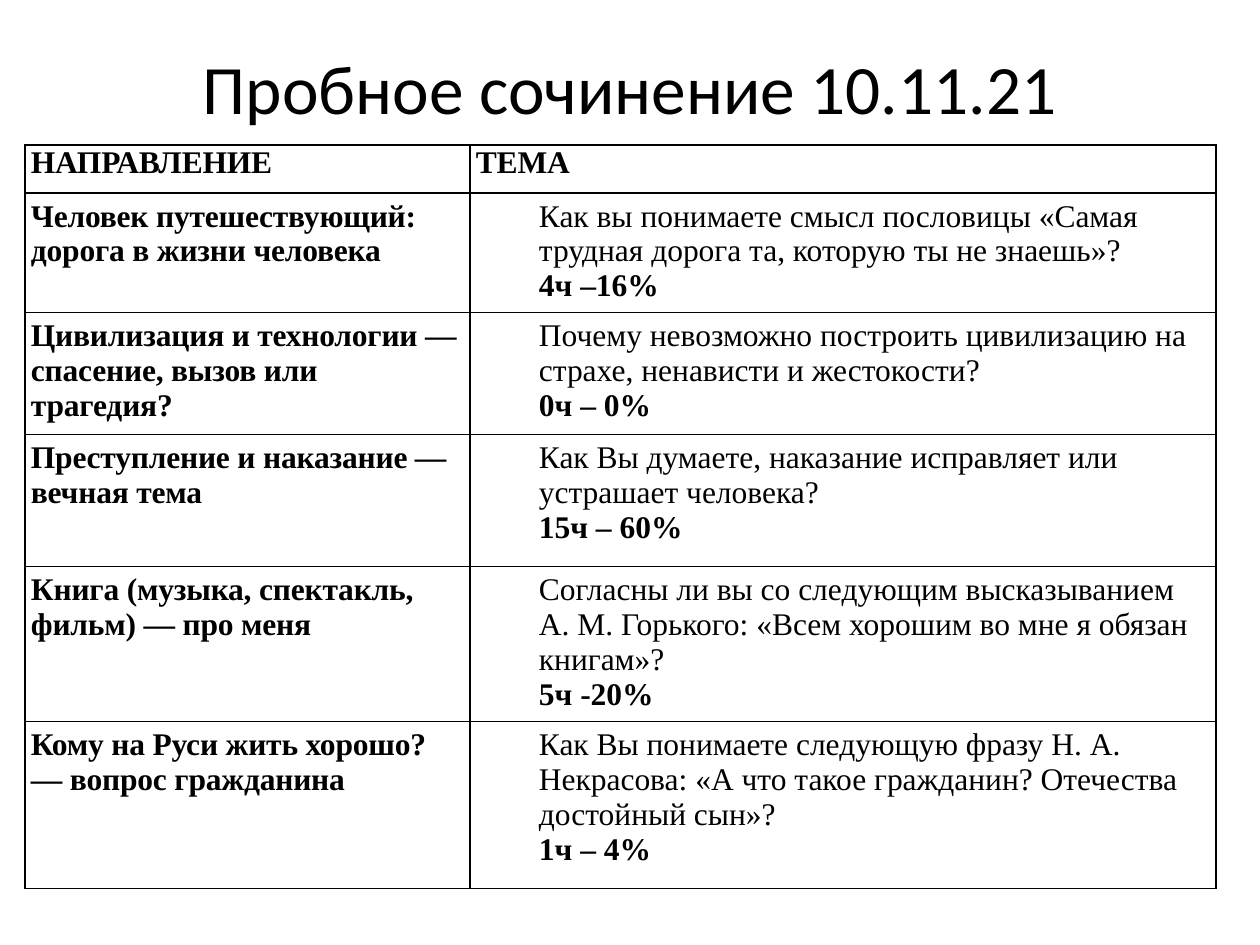
import pptx
import pptx.util
import pptx.dml.color
import pptx.enum.text
import pptx.oxml.ns
import lxml.etree

TITLE = "Пробное сочинение 10.11.21"
HEADINGS = ("НАПРАВЛЕНИЕ", "ТЕМА")
TOPICS = [
    ("Человек путешествующий: дорога в жизни человека",
     "Как вы понимаете смысл пословицы «Самая трудная дорога та, которую ты не знаешь»?",
     "4ч –16%"),
    ("Цивилизация и технологии — спасение, вызов или трагедия?",
     "Почему невозможно построить цивилизацию на страхе, ненависти и жестокости?",
     "0ч – 0%"),
    ("Преступление и наказание — вечная тема",
     "Как Вы думаете, наказание исправляет или устрашает человека?",
     "15ч – 60%"),
    ("Книга (музыка, спектакль, фильм) — про меня",
     "Согласны ли вы со следующим высказыванием А. М. Горького: «Всем хорошим во мне я обязан книгам»?",
     "5ч -20%"),
    ("Кому на Руси жить хорошо? — вопрос гражданина",
     "Как Вы понимаете следующую фразу Н. А. Некрасова: «А что такое гражданин? Отечества достойный сын»?",
     "1ч – 4%"),
]
COLORS = {"text": "000000", "border": "000000", "paper": "FFFFFF"}
COLUMN_WIDTHS = (445, 746)
ROW_HEIGHTS = (48, 119, 122, 132, 155, 167)
TOPIC_INDENT = 63
SCALE = 914400 / 126


def px(length):
    return pptx.util.Emu(round(length * SCALE))


def rgb(key):
    return pptx.dml.color.RGBColor.from_string(COLORS[key])


def write(paragraph, text, font="Times New Roman", size=18, bold=False,
          spacing=0, indent=0, align=None):
    run = paragraph.add_run()
    run.text = text
    run.font.name = font
    run.font.size = pptx.util.Pt(size)
    run.font.bold = bold
    run.font.color.rgb = rgb("text")
    if spacing:
        run.font._element.set("spc", str(spacing))
    if indent:
        paragraph._p.get_or_add_pPr().set("marL", str(px(indent)))
    if align is not None:
        paragraph.alignment = align


def add_border(cell):
    qn = pptx.oxml.ns.qn
    cell_properties = cell._tc.get_or_add_tcPr()
    for position, side in enumerate(("a:lnL", "a:lnR", "a:lnT", "a:lnB")):
        line = lxml.etree.Element(qn(side), w=str(pptx.util.Pt(1)))
        fill = lxml.etree.SubElement(line, qn("a:solidFill"))
        lxml.etree.SubElement(fill, qn("a:srgbClr"), val=COLORS["border"])
        cell_properties.insert(position, line)


def format_cell(cell):
    cell.margin_left = cell.margin_right = cell.margin_top = px(6)
    cell.margin_bottom = px(9)
    cell.fill.solid()
    cell.fill.fore_color.rgb = rgb("paper")
    add_border(cell)


def main():
    presentation = pptx.Presentation()
    presentation.slide_width, presentation.slide_height = px(1260), px(945)
    slide = presentation.slides.add_slide(presentation.slide_layouts[5])

    title = slide.shapes.title
    title.left, title.top, title.width, title.height = px(63), px(38), px(1134), px(97)
    title.text_frame.vertical_anchor = pptx.enum.text.MSO_ANCHOR.MIDDLE
    write(title.text_frame.paragraphs[0], TITLE, font="Calibri", size=39.6,
          align=pptx.enum.text.PP_ALIGN.CENTER)

    topics_table = slide.shapes.add_table(
        len(ROW_HEIGHTS), len(COLUMN_WIDTHS), px(25), px(145),
        px(sum(COLUMN_WIDTHS)), px(sum(ROW_HEIGHTS))).table
    for column, width in zip(topics_table.columns, COLUMN_WIDTHS):
        column.width = px(width)
    for row, height in zip(topics_table.rows, ROW_HEIGHTS):
        row.height = px(height)
    for cell in topics_table.iter_cells():
        format_cell(cell)

    for column, heading in enumerate(HEADINGS):
        cell = topics_table.cell(0, column)
        cell.margin_top = px(0)
        write(cell.text_frame.paragraphs[0], heading, bold=True, spacing=-10)

    for row, (direction, question, share) in enumerate(TOPICS, start=1):
        write(topics_table.cell(row, 0).text_frame.paragraphs[0], direction,
              bold=True, spacing=-10)
        topic = topics_table.cell(row, 1).text_frame
        write(topic.paragraphs[0], question, indent=TOPIC_INDENT)
        write(topic.add_paragraph(), share, bold=True, indent=TOPIC_INDENT)

    presentation.save("out.pptx")


if __name__ == "__main__":
    main()
